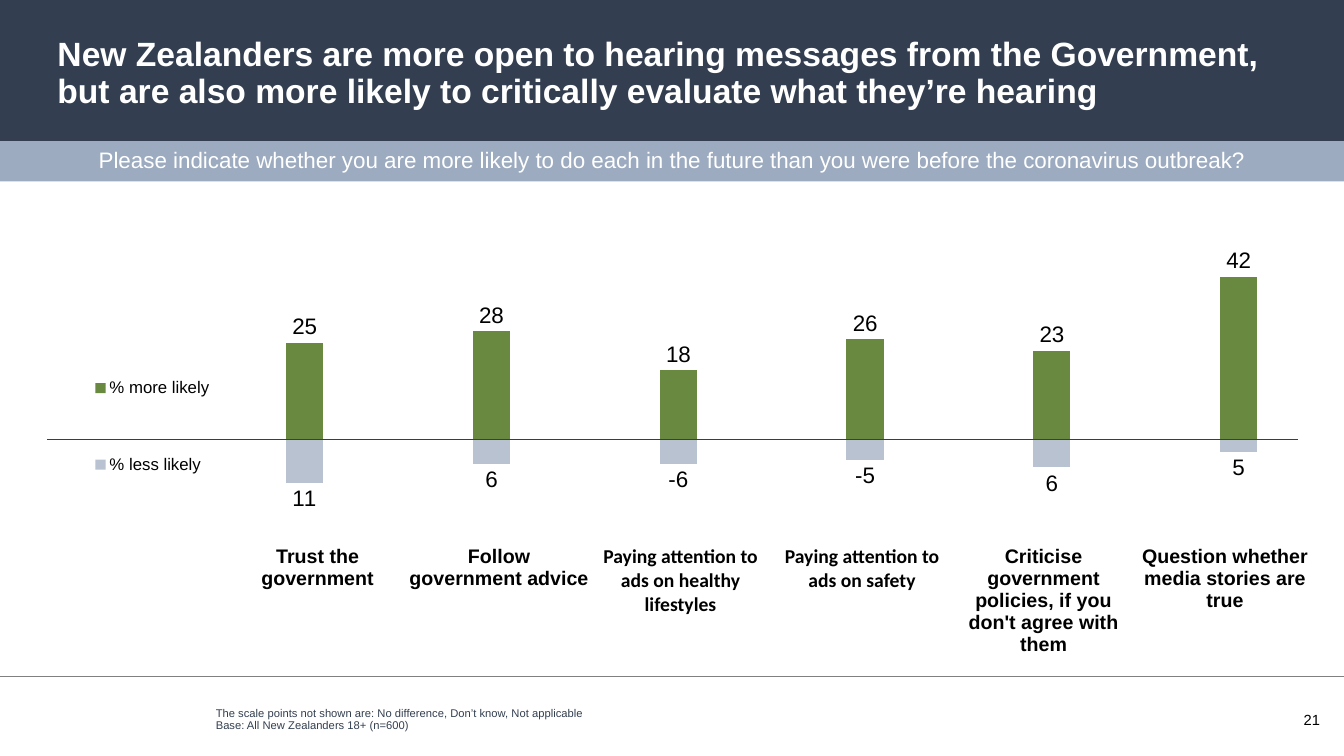
from lxml import etree
from pptx import Presentation
from pptx import util as u
from pptx.chart.data import CategoryChartData
from pptx.dml.color import RGBColor
from pptx.enum import chart as ch, shapes, text
from pptx.oxml import parse_xml
from pptx.oxml.ns import nsdecls, qn

TITLE = ("New Zealanders are more open to hearing messages from the Government, "
         "but are also more likely to critically evaluate what they’re hearing")
QUESTION = ("Please indicate whether you are more likely to do each in the future "
            "than you were before the coronavirus outbreak?")
NOTES = ["The scale points not shown are: No difference, Don’t know, Not applicable",
         "Base: All New Zealanders 18+ (n=600)"]
PAGE_NUMBER = "21"
# (label paragraphs, font)
STATEMENTS = [
    (["Trust the government"], "Arial"),
    (["Follow", "government advice"], "Arial"),
    (["Paying attention to ads on healthy lifestyles"], "Calibri"),
    (["Paying attention to ads on safety"], "Calibri"),
    (["Criticise government policies, if you", "don't agree with them"], "Arial"),
    (["Question whether", "media stories are true"], "Arial"),
]
SERIES = [("% more likely", [25, 28, 18, 26, 23, 42], "green"),
          ("% less likely", [-11, -6, -6, -5, -7, -3], "mist")]
LESS_LIKELY_LABELS = {0: "11", 1: "6", 4: "6", 5: "5"}
COLORS = {"navy": "333F50", "steel": "9CABC0", "green": "698940", "mist": "B9C2D1",
          "grey": "808080", "black": "000000", "white": "FFFFFF"}

WIDTH, HEIGHT = 13.33, 7.5
HEADER, STRIP = 1.4, 0.4
COLUMN = 1.8
PLOT_LAYOUT = (0.13, 0.048, 0.857, 0.848)
LEGEND_LAYOUT = (0.02, 0.35, 0.13, 0.42)

ALIGN, ANCHOR = text.PP_ALIGN, text.MSO_ANCHOR


def rgb(name):
    return RGBColor.from_string(COLORS[name])


def box(*lengths):
    return [u.Inches(length) for length in lengths]


def style(font, size, color="black", bold=False, name="Arial"):
    font.name, font.size, font.bold = name, u.Pt(size), bold
    font.color.rgb = rgb(color)


def write(frame, lines, align=ALIGN.LEFT, spacing=1.0, **look):
    for index, line in enumerate(lines):
        paragraph = frame.add_paragraph() if index else frame.paragraphs[0]
        paragraph.alignment, paragraph.line_spacing = align, spacing
        paragraph.space_before = u.Pt(0)
        run = paragraph.add_run()
        run.text = line
        style(run.font, **look)


def set_frame(frame, anchor):
    frame.word_wrap = True
    frame.auto_size = text.MSO_AUTO_SIZE.NONE
    frame.vertical_anchor = anchor


def add_band(slide, top, height, color):
    band = slide.shapes.add_shape(shapes.MSO_SHAPE.RECTANGLE, *box(0, top, WIDTH, height))
    band.shadow.inherit = False
    band.fill.solid()
    band.fill.fore_color.rgb = rgb(color)
    band.line.fill.background()


def add_rule(slide, left, right, y, color):
    rule = slide.shapes.add_connector(shapes.MSO_CONNECTOR.STRAIGHT, *box(left, y, right, y))
    rule.line.color.rgb, rule.line.width = rgb(color), u.Pt(0.5)
    etree.SubElement(rule._element.spPr, qn("a:effectLst"))


def fill_placeholder(slide, placeholder, place, lines, **look):
    """Move a placeholder in front of the shapes drawn so far and write in it."""
    slide.shapes._spTree.append(placeholder._element)
    placeholder.left, placeholder.top, placeholder.width, placeholder.height = box(*place)
    frame = placeholder.text_frame
    set_frame(frame, ANCHOR.MIDDLE)
    write(frame, lines, spacing=0.9, **look)
    return frame


def add_text(slide, place, line, **look):
    frame = slide.shapes.add_textbox(*box(*place)).text_frame
    set_frame(frame, ANCHOR.MIDDLE)
    write(frame, [line], **look)


def layout_xml(layout, target=""):
    sizes = "".join(f'<c:{tag} val="{value}"/>' for tag, value in zip("xywh", layout))
    return parse_xml(f'<c:layout {nsdecls("c")}><c:manualLayout>{target}<c:xMode val="edge"/>'
                     f'<c:yMode val="edge"/>{sizes}</c:manualLayout></c:layout>')


def add_likelihood_chart(slide):
    data = CategoryChartData(number_format="0")
    data.categories = [str(number + 1) for number in range(len(STATEMENTS))]
    for name, values, _ in SERIES:
        data.add_series(name, values)
    chart = slide.shapes.add_chart(ch.XL_CHART_TYPE.COLUMN_CLUSTERED,
                                   *box(0.41, 1.43, 12.97, 5), data).chart
    style(chart.font, 10)
    chart.has_title = False
    chart.category_axis.visible = chart.value_axis.visible = False
    chart.value_axis.has_major_gridlines = False
    chart.value_axis.minimum_scale, chart.value_axis.maximum_scale = -40, 70

    chart.has_legend = True
    legend = chart.legend
    legend.position = ch.XL_LEGEND_POSITION.LEFT
    legend.include_in_layout = False
    style(legend.font, 12)
    for old in legend._element.findall(qn("c:layout")):
        legend._element.remove(old)
    legend._element.find(qn("c:legendPos")).addnext(layout_xml(LEGEND_LAYOUT))
    plot_area = chart._chartSpace.chart.plotArea
    for old in plot_area.findall(qn("c:layout")):
        plot_area.remove(old)
    plot_area.insert(0, layout_xml(PLOT_LAYOUT, '<c:layoutTarget val="inner"/>'))

    plot = chart.plots[0]
    plot.gap_width, plot.overlap, plot.vary_by_categories = 400, 100, False
    for series, (_, _, color) in zip(plot.series, SERIES):
        series.invert_if_negative = False
        series.format.fill.solid()
        series.format.fill.fore_color.rgb = rgb(color)
        labels = series.data_labels
        labels.show_value = True
        labels.position = ch.XL_LABEL_POSITION.OUTSIDE_END
        labels.number_format, labels.number_format_is_linked = "0", False
        style(labels.font, 16)
    for index, label_text in LESS_LIKELY_LABELS.items():
        label = plot.series[1].points[index].data_label
        write(label.text_frame, [label_text], ALIGN.CENTER, size=16)
        label.position = ch.XL_LABEL_POSITION.OUTSIDE_END


def add_statements(slide):
    count = len(STATEMENTS)
    table = slide.shapes.add_table(1, count, *box(2.25, 5.4, COLUMN * count, 1.18)).table
    table.first_row = table.horz_banding = False
    for cell, (lines, font) in zip(table.rows[0].cells, STATEMENTS):
        cell.fill.background()
        cell.margin_left = cell.margin_right = cell.margin_top = u.Inches(0.01)
        cell.margin_bottom = 0
        write(cell.text_frame, lines, ALIGN.CENTER, size=14, bold=True, name=font)


def main():
    presentation = Presentation()
    presentation.slide_width, presentation.slide_height = box(WIDTH, HEIGHT)
    slide = presentation.slides.add_slide(presentation.slide_layouts[1])
    title, notes = slide.placeholders

    add_rule(slide, 0, WIDTH, 6.71, "grey")
    add_text(slide, (12.28, 6.99, 0.91, 0.29), PAGE_NUMBER, align=ALIGN.RIGHT, size=10.5)
    add_band(slide, 0, HEADER, "navy")
    add_band(slide, HEADER, STRIP, "steel")
    fill_placeholder(slide, title, (0.47, 0.07, 12.49, 1.33), [TITLE],
                     size=24, color="white", bold=True)
    frame = fill_placeholder(slide, notes, (2.04, 7, 7.74, 0.28), NOTES, size=8, color="navy")
    for paragraph in frame.paragraphs:
        properties = paragraph._p.get_or_add_pPr()
        properties.set("marL", "0")
        properties.set("indent", "0")
        etree.SubElement(properties, qn("a:buNone"))
    add_likelihood_chart(slide)
    add_text(slide, (0.62, 1.42, 12.09, 0.35), QUESTION, align=ALIGN.CENTER,
             spacing=0.9, size=16, color="white")
    add_statements(slide)
    add_rule(slide, 0.47, 12.87, 4.36, "navy")
    presentation.save("out.pptx")


if __name__ == "__main__":
    main()
